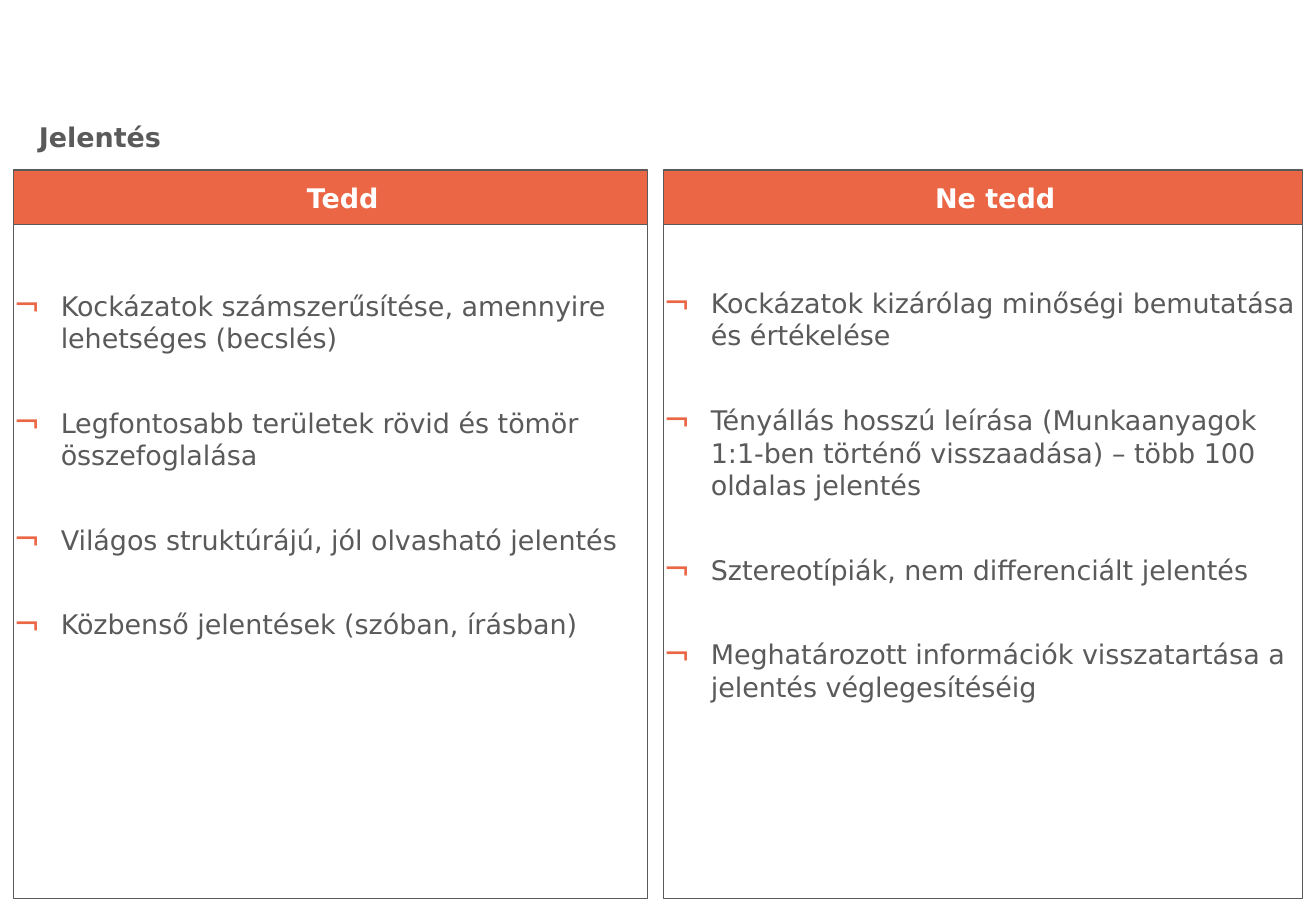
from dataclasses import dataclass

from lxml import etree
from pptx import Presentation
from pptx import util as u
from pptx.dml.color import RGBColor
from pptx.enum import text
from pptx.oxml.ns import qn

PX = 9144  # EMU per px, 100 px to the inch


@dataclass(frozen=True)
class Theme:
    font: str = "DejaVu Sans"
    size: int = 16
    line_width: float = 0.75
    bullet_gap: int = 31
    ink: str = "5A5A5A"
    accent: str = "EA6645"
    white: str = "FFFFFF"


theme = Theme()


def place(shape, left, top, width, height, anchor, inset_left=0, inset_top=0):
    """Position a placeholder and prepare its text frame."""
    shape.left, shape.top = left * PX, top * PX
    shape.width, shape.height = width * PX, height * PX
    frame = shape.text_frame
    frame.word_wrap = True
    frame.auto_size = text.MSO_AUTO_SIZE.NONE
    frame.vertical_anchor = anchor
    frame.margin_left, frame.margin_top = inset_left * PX, inset_top * PX
    frame.margin_right = frame.margin_bottom = 0
    return frame


def format_paragraph(paragraph, color, bold, alignment, space_before=0):
    paragraph.alignment = alignment
    paragraph.space_before = u.Pt(space_before)
    font = paragraph.font
    font.name, font.size, font.bold = theme.font, u.Pt(theme.size), bold
    font.color.rgb = RGBColor.from_string(color)


presentation = Presentation()
presentation.slide_width = 1083 * PX
presentation.slide_height = 750 * PX
slide = presentation.slides.add_slide(presentation.slide_layouts.get_by_name("Comparison"))

# Title
title = place(slide.shapes.title, 32, 99, 1003, 51, text.MSO_ANCHOR.TOP)
title.text = "Jelentés"
format_paragraph(title.paragraphs[0], theme.ink, True, text.PP_ALIGN.LEFT)

# Columns: left, width, list inset, heading, items
columns = [
    (11, 522, 53, "Tedd", [
        "Kockázatok számszerűsítése, amennyire lehetséges (becslés)",
        "Legfontosabb területek rövid és tömör összefoglalása",
        "Világos struktúrájú, jól olvasható jelentés",
        "Közbenső jelentések (szóban, írásban)",
    ]),
    (546, 526, 51, "Ne tedd", [
        "Kockázatok kizárólag minőségi bemutatása és értékelése",
        "Tényállás hosszú leírása (Munkaanyagok 1:1-ben történő visszaadása) – több 100 oldalas jelentés",
        "Sztereotípiák, nem differenciált jelentés",
        "Meghatározott információk visszatartása a jelentés véglegesítéséig",
    ]),
]

for index, (left, width, list_inset, heading, items) in enumerate(columns):
    header_box = slide.placeholders[1 + 2 * index]
    list_box = slide.placeholders[2 + 2 * index]

    # Heading bar
    header = place(header_box, left, 140, width, 45, text.MSO_ANCHOR.MIDDLE, inset_left=20)
    header_box.fill.solid()
    header_box.fill.fore_color.rgb = RGBColor.from_string(theme.accent)
    header.text = heading
    format_paragraph(header.paragraphs[0], theme.white, True, text.PP_ALIGN.CENTER)

    # Bulleted list
    body = place(list_box, left, 185, width, 555, text.MSO_ANCHOR.TOP, inset_top=list_inset)
    body.text = "\n".join(items)
    for number, paragraph in enumerate(body.paragraphs):
        properties = paragraph._p.get_or_add_pPr()
        properties.set("marL", str(39 * PX))
        properties.set("indent", str(-39 * PX))
        bullet_color = etree.SubElement(properties, qn("a:buClr"))
        etree.SubElement(bullet_color, qn("a:srgbClr"), val=theme.accent)
        etree.SubElement(properties, qn("a:buSzPct"), val="120000")
        etree.SubElement(properties, qn("a:buFont"), typeface=theme.font)
        etree.SubElement(properties, qn("a:buChar"), char="¬")
        format_paragraph(paragraph, theme.ink, False, text.PP_ALIGN.LEFT,
                         theme.bullet_gap if number else 0)

    # Outlines
    for box in (header_box, list_box):
        box.line.color.rgb = RGBColor.from_string(theme.ink)
        box.line.width = u.Pt(theme.line_width)

presentation.save("out.pptx")
